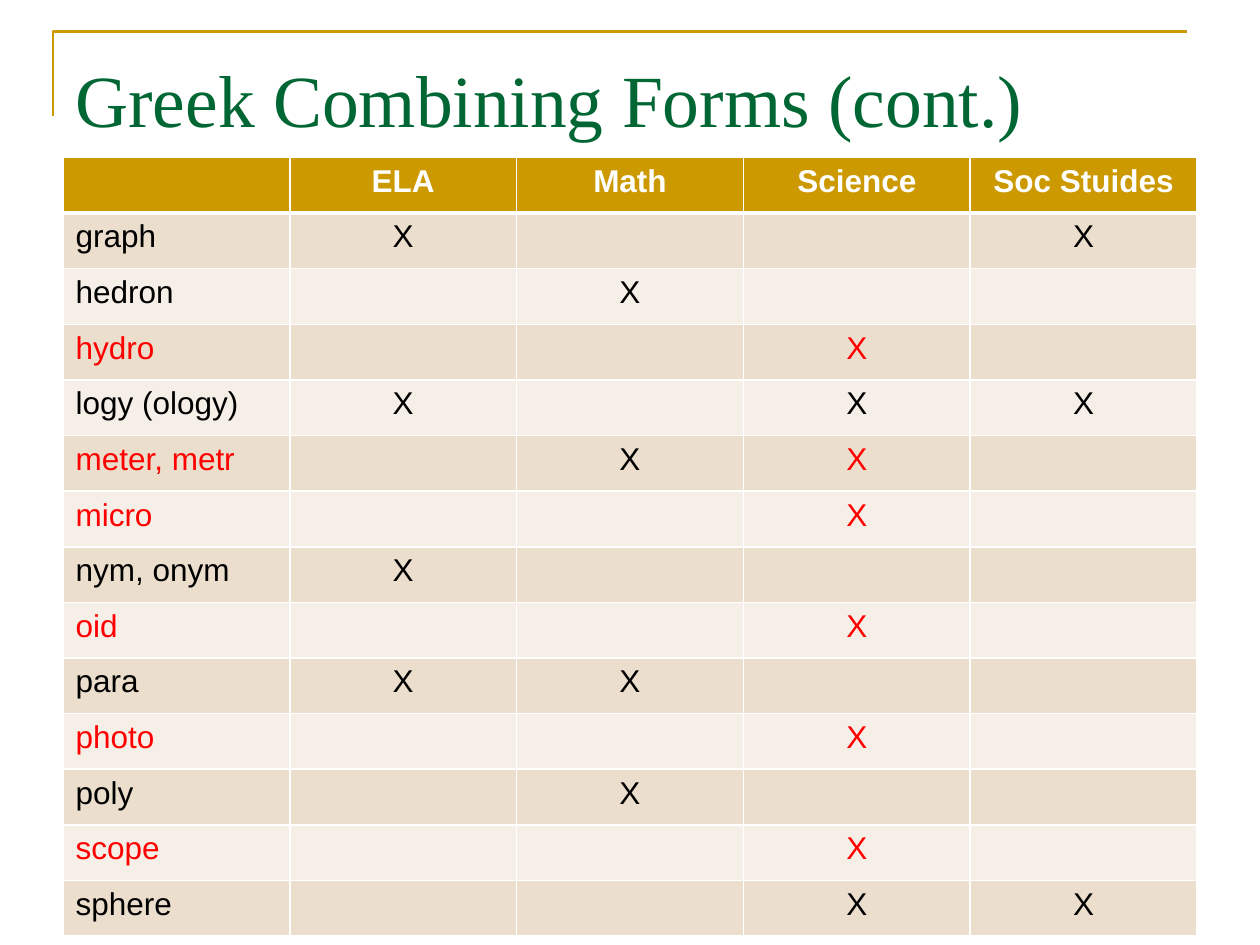
import pptx
import pptx.util
import pptx.dml.color
import pptx.enum.text
import pptx.oxml
import lxml.etree

Inch, Pt = pptx.util.Inches, pptx.util.Pt
ALIGN = pptx.enum.text.PP_ALIGN
INK = {"gold": "CC9900", "green": "006633", "dark": "ECDECC", "light": "F6EFE7",
       "white": "FFFFFF", "black": "000000", "red": "FF0000"}
HEADS = ["", "ELA", "Math", "Science", "Soc Stuides"]
# Each form: label, subjects that use it, label colour
FORMS = [
    ("graph", ["ELA", "Soc Stuides"], "black"),
    ("hedron", ["Math"], "black"),
    ("hydro", ["Science"], "red"),
    ("logy (ology)", ["ELA", "Science", "Soc Stuides"], "black"),
    ("meter, metr", ["Math", "Science"], "red"),
    ("micro", ["Science"], "red"),
    ("nym, onym", ["ELA"], "black"),
    ("oid", ["Science"], "red"),
    ("para", ["ELA", "Math"], "black"),
    ("photo", ["Science"], "red"),
    ("poly", ["Math"], "black"),
    ("scope", ["Science"], "red"),
    ("sphere", ["Science", "Soc Stuides"], "black"),
]


def style(par, font, size, ink, bold=False):
    for run in par.runs:
        run.font.name, run.font.size, run.font.bold = font, Pt(size), bold
        run.font.color.rgb = pptx.dml.color.RGBColor.from_string(INK[ink])


def edge(cell, side, width):
    props = cell._tc.get_or_add_tcPr()
    line = lxml.etree.SubElement(props, pptx.oxml.ns.qn("a:ln" + side), w=str(Pt(width)))
    fill = lxml.etree.SubElement(line, pptx.oxml.ns.qn("a:solidFill"))
    lxml.etree.SubElement(fill, pptx.oxml.ns.qn("a:srgbClr"), val=INK["white"])


deck = pptx.Presentation()
deck.slide_width, deck.slide_height = Inch(10), Inch(7.5)
slide = deck.slides.add_slide(deck.slide_layouts[6])
left, wide = deck.slide_width * 0.05, deck.slide_width * 0.9

# Corner rule
path = slide.shapes.build_freeform(Inch(0.42), Inch(0.92))
path.add_line_segments([(Inch(0.42), Inch(0.25)), (Inch(9.42), Inch(0.25))], close=False)
rule = path.convert_to_shape()
rule.shadow.inherit = False
rule.fill.background()
rule.line.width = Pt(1.5)
rule.line.color.rgb = pptx.dml.color.RGBColor.from_string(INK["gold"])

# Title
title = slide.shapes.add_textbox(int(left), Inch(0.3), int(wide), Inch(1.25))
frame = title.text_frame
frame.word_wrap = True
frame.margin_top = Inch(0.13)
frame.text = "Greek Combining Forms (cont.)"
style(frame.paragraphs[0], "Times New Roman", 42, "green")

# Table
count = len(FORMS) + 1
grid = slide.shapes.add_table(count, len(HEADS), int(left), Inch(1.25),
                              int(wide), Inch(6.18)).table
for r in range(count):
    for c, head in enumerate(HEADS):
        cell = grid.cell(r, c)
        if r == 0:
            text, ink, back = head, "white", "gold"
        else:
            label, marks, tint = FORMS[r - 1]
            text = label if c == 0 else "X" if head in marks else ""
            # Red rows mark only the label and the science column
            ink = tint if head in ("", "Science") else "black"
            back = "dark" if r % 2 else "light"
        cell.text_frame.text = text
        par = cell.text_frame.paragraphs[0]
        par.font.size = Pt(18)
        par.alignment = ALIGN.CENTER if c else ALIGN.LEFT
        style(par, "Arial", 18, ink, r == 0)
        for side in "LRTB":
            thick = (r == 0 and side == "B") or (r == 1 and side == "T")
            edge(cell, side, 3 if thick else 1)
        cell.fill.solid()
        cell.fill.fore_color.rgb = pptx.dml.color.RGBColor.from_string(INK[back])

deck.save("out.pptx")
